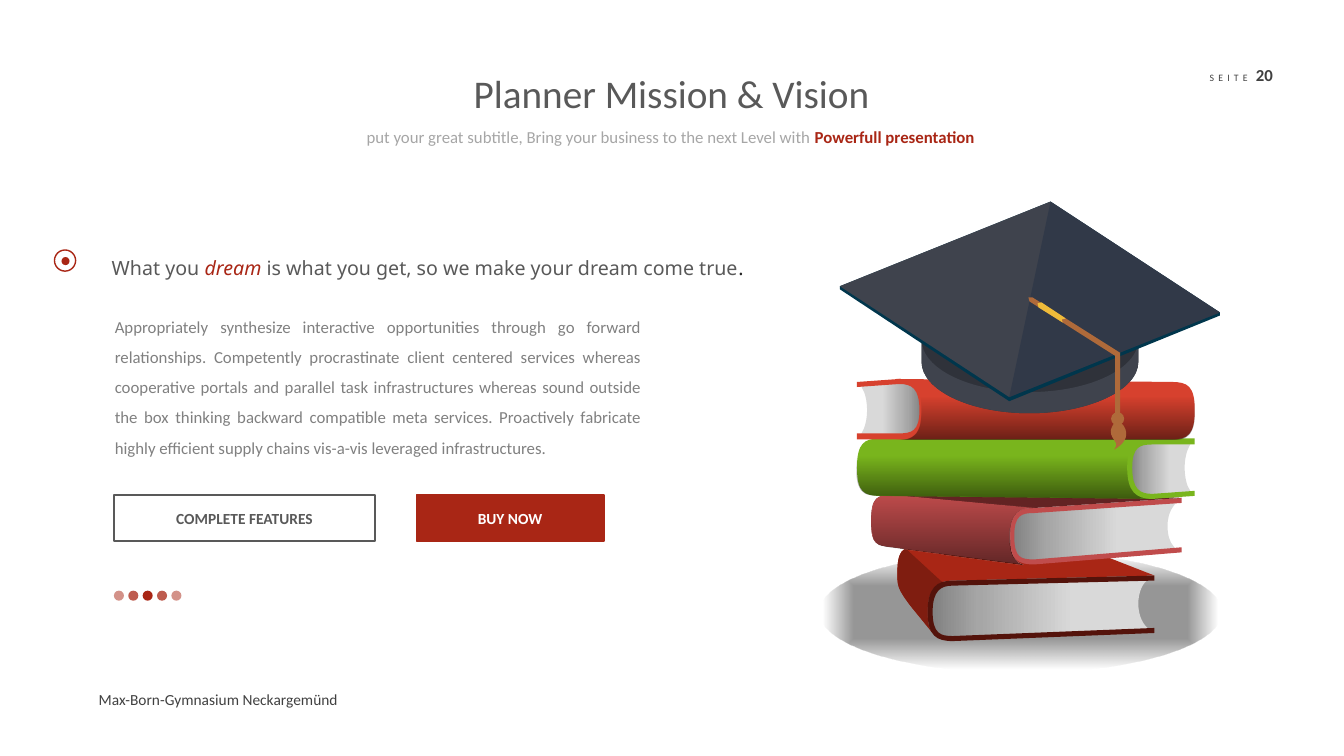
from lxml import etree
from pptx import Presentation
from pptx.dml.color import RGBColor
from pptx.enum import shapes, text
from pptx.oxml.ns import qn
from pptx.util import Inches, Pt

COLORS = {
    "accent": "A92615", "accent dark": "7F1D10", "accent deep": "54130B",
    "title": "595959", "subtitle": "A6A6A6", "body": "808080", "ink": "262626",
    "footer": "404040", "white": "FFFFFF", "black": "000000", "paper": "D9D9D9",
    "rose": "C04C4C", "rose dark": "632323", "green": "79B51D", "red": "D7412E",
    "cap": "3F434D", "cap dark": "2F323A", "cap edge": "00364C", "cap base": "00425C",
    "cap shade": "12233F", "tassel": "AF6A3A", "gold": "EEBB3A",
}
OVAL = shapes.MSO_SHAPE.OVAL


def paint(shape, stops, angle=None, line=None):
    """Fill with (percent, color, alpha) stops; one stop is solid, no angle is radial."""
    shape.shadow.inherit = False
    if line:
        shape.line.color.rgb = RGBColor.from_string(COLORS[line])
        shape.line.width = Pt(1)
    else:
        shape.line.fill.background()
    if not stops:
        shape.fill.background()
        return
    if len(stops) == 1:
        shape.fill.solid()
        fill = shape._element.spPr.find(qn("a:solidFill"))
    else:
        shape.fill.gradient()
        fill = shape._element.spPr.find(qn("a:gradFill"))
    for child in list(fill):
        fill.remove(child)
    parent = fill
    if len(stops) > 1:
        stop_list = etree.SubElement(fill, qn("a:gsLst"))
    for percent, color, alpha in stops:
        if len(stops) > 1:
            parent = etree.SubElement(stop_list, qn("a:gs"), pos=str(percent * 1000))
        tint = etree.SubElement(parent, qn("a:srgbClr"), val=COLORS[color])
        if alpha < 100:
            etree.SubElement(tint, qn("a:alpha"), val=str(alpha * 1000))
    if len(stops) > 1 and angle is None:
        radial = etree.SubElement(fill, qn("a:path"), path="shape")
        etree.SubElement(radial, qn("a:fillToRect"), l="50000", t="50000", r="50000", b="50000")
    elif len(stops) > 1:
        etree.SubElement(fill, qn("a:lin"), ang=str(angle * 60000), scaled="0")


def write(frame, runs, size, font="Calibri", align=text.PP_ALIGN.LEFT, spacing=None, wrap=False):
    """Fill a text frame with one paragraph of (words, color, style) runs."""
    frame.word_wrap = wrap
    paragraph = frame.paragraphs[0]
    paragraph.alignment = align
    if spacing:
        paragraph.line_spacing = spacing
    for words, color, style in runs:
        run = paragraph.add_run()
        run.text = words
        run.font.name = font
        run.font.size = Pt(size)
        run.font.bold = style == "bold"
        run.font.italic = style == "italic"
        run.font.color.rgb = RGBColor.from_string(COLORS[color])


prs = Presentation()
prs.slide_width, prs.slide_height = Inches(13.33), Inches(7.5)
slide = prs.slides.add_slide(prs.slide_layouts[5])
CENTER, JUSTIFY = text.PP_ALIGN.CENTER, text.PP_ALIGN.JUSTIFY

title = slide.shapes.title
title.left, title.top, title.width, title.height = map(Inches, (4.57, 0.64, 4.18, 0.57))
write(title.text_frame, [("Planner Mission & Vision", "title", "")], 28, align=CENTER)

passages = [
    ((11.9, 0.59, 0.96, 0.3), [("SEITE", "footer", ""), (" ", "footer", ""), ("20", "footer", "bold")],
     12, {}),
    ((0.88, 6.8, 2.59, 0.29), [("Max-Born-Gymnasium Neckargemünd", "footer", "")], 11, {}),
    ((3.53, 1.21, 6.28, 0.3),
     [("put your great subtitle, Bring your business to the next Level with ", "subtitle", ""),
      ("Powerfull presentation ", "accent", "bold")], 12, {"align": CENTER}),
    ((1.01, 2.37, 6.57, 0.45),
     [("What you ", "title", ""), ("dream ", "accent", "italic"),
      ("is what you get, so we make your dream come true", "title", ""), (".", "ink", "")],
     14, {"font": "Noto Sans", "spacing": 1.5, "wrap": True}),
    ((1.04, 2.99, 5.42, 1.62),
     [("Appropriately synthesize interactive opportunities through go forward relationships. "
       "Competently procrastinate client centered services whereas cooperative portals and parallel "
       "task infrastructures whereas sound outside the box thinking backward compatible meta "
       "services. Proactively fabricate highly efficient supply chains vis-a-vis leveraged "
       "infrastructures. ", "body", "")], 12, {"align": JUSTIFY, "spacing": 1.5, "wrap": True}),
]
for box, runs, size, options in passages:
    frame = slide.shapes.add_textbox(*map(Inches, box)).text_frame
    frame.auto_size = text.MSO_AUTO_SIZE.SHAPE_TO_FIT_TEXT
    write(frame, runs, size, **options)
    if runs[0][0] == "SEITE":
        page_label = frame.paragraphs[0].runs[0]
        page_label.font.size = Pt(7)
        page_label._r.get_or_add_rPr().set("spc", "300")

bullet = slide.shapes.add_group_shape()
ring = bullet.shapes.add_shape(OVAL, *map(Inches, (0.54, 2.48, 0.21, 0.21)))
paint(ring, [], line="accent")
core = bullet.shapes.add_shape(OVAL, *map(Inches, (0.61, 2.55, 0.08, 0.08)))
paint(core, [(0, "accent", 100)])

for label, left, width, stops, outline, color in [
    ("COMPLETE FEATURES", 1.13, 2.59, [], "title", "title"),
    ("BUY NOW", 4.13, 1.86, [(0, "accent", 100)], "accent", "white"),
]:
    button = slide.shapes.add_shape(shapes.MSO_SHAPE.RECTANGLE, *map(Inches, (left, 4.91, width, 0.46)))
    paint(button, stops, line=outline)
    write(button.text_frame, [(label, color, "bold")], 11, align=CENTER)

dots = slide.shapes.add_group_shape()
for i, alpha in enumerate([50, 75, 100, 75, 50]):
    dot = dots.shapes.add_shape(OVAL, *map(Inches, (1.13 + i * 0.57 / 4, 5.86, 0.1, 0.1)))
    paint(dot, [(0, "accent", alpha)])

# Outlines: 2 numbers are a corner, 6 a Bézier curve, 4 the box of an ellipse.
PAGES = [(35, "paper", 100), (78, "subtitle", 100), (100, "body", 100)]
SHADE = [(0, "black", 0), (100, "black", 50)]
LOW_SHADE = [(30, "black", 0), (100, "black", 50)]

ground_spine = [(9.2, 6.07), (9.2, 5.89, 9.25, 5.81, 9.35, 5.78), (8.98, 5.44),
                (8.92, 5.48, 8.9, 5.54, 8.9, 5.69), (8.9, 5.81, 8.9, 5.84, 9.03, 6.01),
                (9.25, 6.28), (9.21, 6.24, 9.2, 6.17, 9.2, 6.07)]
rose_spine = [(10.26, 5.04), (8.86, 4.91), (8.7, 4.91, 8.64, 4.93, 8.64, 5.17),
              (8.64, 5.41, 8.69, 5.41, 8.86, 5.43), (10.15, 5.6),
              (10.05, 5.57, 10.01, 5.5, 10.01, 5.32), (10.01, 5.09, 10.1, 5.04, 10.26, 5.04)]
green_spine = [(8.73, 4.92), (8.57, 4.92, 8.5, 4.88, 8.5, 4.64), (8.5, 4.4, 8.57, 4.35, 8.73, 4.35),
               (11.46, 4.35), (11.29, 4.35, 11.21, 4.4, 11.21, 4.64),
               (11.21, 4.88, 11.29, 4.95, 11.46, 4.95)]
green_pages = [(11.43, 4.92), (11.29, 4.92, 11.21, 4.88, 11.21, 4.64),
               (11.21, 4.41, 11.29, 4.39, 11.43, 4.39), (11.82, 4.38), (11.8, 4.42),
               (11.77, 4.47, 11.75, 4.55, 11.75, 4.64), (11.75, 4.73, 11.77, 4.82, 11.8, 4.86),
               (11.82, 4.9)]
green_cover = [(11.85, 4.92), (11.43, 4.95), (11.27, 4.95, 11.18, 4.88, 11.18, 4.64),
               (11.18, 4.4, 11.27, 4.35, 11.43, 4.35), (11.85, 4.35), (11.85, 4.41), (11.43, 4.41),
               (11.31, 4.41, 11.23, 4.43, 11.23, 4.64), (11.23, 4.86, 11.31, 4.9, 11.43, 4.9),
               (11.85, 4.87)]
# The red book is the green one turned by half a circle.
red_spine, red_pages, red_cover = [
    [tuple((8.71 if i % 2 else 20.35) - v for i, v in enumerate(step)) for step in outline]
    for outline in (green_spine, green_pages, green_cover)]

ground_book = [
    ([(8.13, 5.47, 3.98, 1.2)], [(43, "body", 82), (94, "body", 0)], None),
    ([(9.2, 6.07), (9.2, 5.83, 9.29, 5.76, 9.45, 5.76), (11.45, 5.71), (10.58, 5.37), (9.09, 5.42),
      (8.95, 5.42, 8.9, 5.47, 8.9, 5.69), (8.9, 5.81, 8.9, 5.83, 9.03, 6.01), (9.25, 6.28),
      (9.21, 6.24, 9.2, 6.17, 9.2, 6.07)], "accent", None),
    (ground_spine, "accent dark", None),
    ([(11.29, 5.99), (11.29, 5.88, 11.33, 5.78, 11.4, 5.74), (9.45, 5.79),
      (9.32, 5.79, 9.23, 5.84, 9.23, 6.07), (9.23, 6.31, 9.33, 6.33, 9.45, 6.33), (11.41, 6.25),
      (11.34, 6.21, 11.29, 6.11, 11.29, 5.99)], PAGES, 180),
    ([(11.45, 6.28), (9.45, 6.36), (9.29, 6.36, 9.2, 6.31, 9.2, 6.07),
      (9.2, 5.83, 9.29, 5.76, 9.45, 5.76), (11.45, 5.71), (11.45, 5.76), (9.45, 5.81),
      (9.33, 5.81, 9.25, 5.86, 9.25, 6.07), (9.25, 6.29, 9.33, 6.31, 9.45, 6.31), (11.45, 6.23)],
     "accent deep", None),
]
rose_book = [
    ([(10.26, 5.58), (10.13, 5.58, 10.03, 5.56, 10.03, 5.32), (10.03, 5.09, 10.13, 5.07, 10.26, 5.07),
      (11.67, 4.98), (11.64, 5.02), (11.6, 5.07, 11.58, 5.14, 11.58, 5.22),
      (11.58, 5.3, 11.6, 5.38, 11.64, 5.42), (11.67, 5.46)], PAGES, 180),
    ([(11.72, 5.48), (10.26, 5.6), (10.1, 5.6, 10.01, 5.56, 10.01, 5.32),
      (10.01, 5.09, 10.1, 5.04, 10.26, 5.04), (11.72, 4.94), (11.72, 4.99), (10.26, 5.09),
      (10.13, 5.09, 10.06, 5.11, 10.06, 5.32), (10.06, 5.54, 10.13, 5.55, 10.26, 5.55),
      (11.72, 5.43)], "rose", None),
    ([(10.01, 5.32), (10.01, 5.09, 10.1, 5.04, 10.26, 5.04), (11.72, 4.94), (10.1, 4.86), (8.86, 4.91),
      (8.7, 4.91, 8.64, 4.93, 8.64, 5.17), (8.64, 5.41, 8.69, 5.41, 8.86, 5.43), (10.15, 5.6),
      (10.06, 5.57, 10.01, 5.5, 10.01, 5.32)], "rose dark", None),
    (rose_spine, "rose", None), (rose_spine, SHADE, 90),
]
green_book = [(green_spine, "green", None), (green_spine, LOW_SHADE, 90),
              (green_pages, PAGES, 180), (green_cover, "green", None)]
red_book = [(red_pages, PAGES, 0), (red_cover, "red", None),
            (red_spine, "red", None), (red_spine, LOW_SHADE, 90)]
cap = [([(9.14, 2.56, 2.14, 1.03)], "cap base", None)]
for top, color in [(3.07, "cap dark"), (3.37, "cap")]:
    cap.append(([(10.21, top + 0.52), (9.62, top + 0.52, 9.14, top + 0.29, 9.14, top), (9.14, 3.59),
                 (9.14, 3.87, 9.62, 4.1, 10.21, 4.1), (10.8, 4.1, 11.29, 3.87, 11.29, 3.59),
                 (11.29, top), (11.29, top + 0.29, 10.8, top + 0.52, 10.21, top + 0.52)], color, None))
cap += [
    ([(12.1, 3.1), (10.42, 2), (8.33, 2.84), (8.33, 2.87), (10.01, 3.98), (12.1, 3.13)], "cap edge", None),
    ([(10.42, 2), (8.33, 2.84), (10.01, 3.94), (12.1, 3.1)], "cap", None),
    ([(10.42, 2), (10.01, 3.94), (12.1, 3.1)], [(0, "cap shade", 30)], None),
    ([(11.08, 4.17), (11.06, 4.14), (11.06, 3.53), (10.21, 2.99), (10.2, 2.95),
      (10.24, 2.95), (11.11, 3.5), (11.11, 4.14)], "tassel", None),
    ([(10.53, 3.17), (10.57, 3.16), (10.33, 3), (10.29, 3.01), (10.3, 3.05), (10.54, 3.2)],
     "gold", None),
    ([(11.02, 4.09, 0.13, 0.13)], "tassel", None),
    ([(11.05, 4.2), (11.05, 4.2, 11, 4.26, 11.02, 4.31), (11.04, 4.36, 11.06, 4.37, 11.07, 4.4),
      (11.08, 4.42, 11.05, 4.46, 11.05, 4.46), (11.05, 4.46, 11.17, 4.4, 11.17, 4.31),
      (11.17, 4.23, 11.12, 4.2, 11.12, 4.2)], "tassel", None),
]

for pieces in (ground_book, rose_book, green_book, red_book, cap):
    group = slide.shapes.add_group_shape()
    for outline, fill, angle in pieces:
        if len(outline[0]) == 4:
            piece = group.shapes.add_shape(OVAL, *map(Inches, outline[0]))
        else:
            steps = [[round(v * 1000) for v in step] for step in outline]
            ends = [step[-2:] for step in steps]
            origin = [min(axis) for axis in zip(*ends)]
            builder = group.shapes.build_freeform(*ends[0], scale=Inches(1) / 1000)
            builder.add_line_segments(ends[1:], close=True)
            piece = builder.convert_to_shape()
            sides = list(piece._element.spPr.iter(qn("a:lnTo")))
            for side, step in zip(sides, steps[1:]):
                if len(step) == 6:
                    curve = etree.Element(qn("a:cubicBezTo"))
                    for x, y in zip(step[::2], step[1::2]):
                        etree.SubElement(curve, qn("a:pt"), x=str(x - origin[0]), y=str(y - origin[1]))
                    side.getparent().replace(side, curve)
        paint(piece, [(0, fill, 100)] if isinstance(fill, str) else fill, angle)

prs.save("out.pptx")
